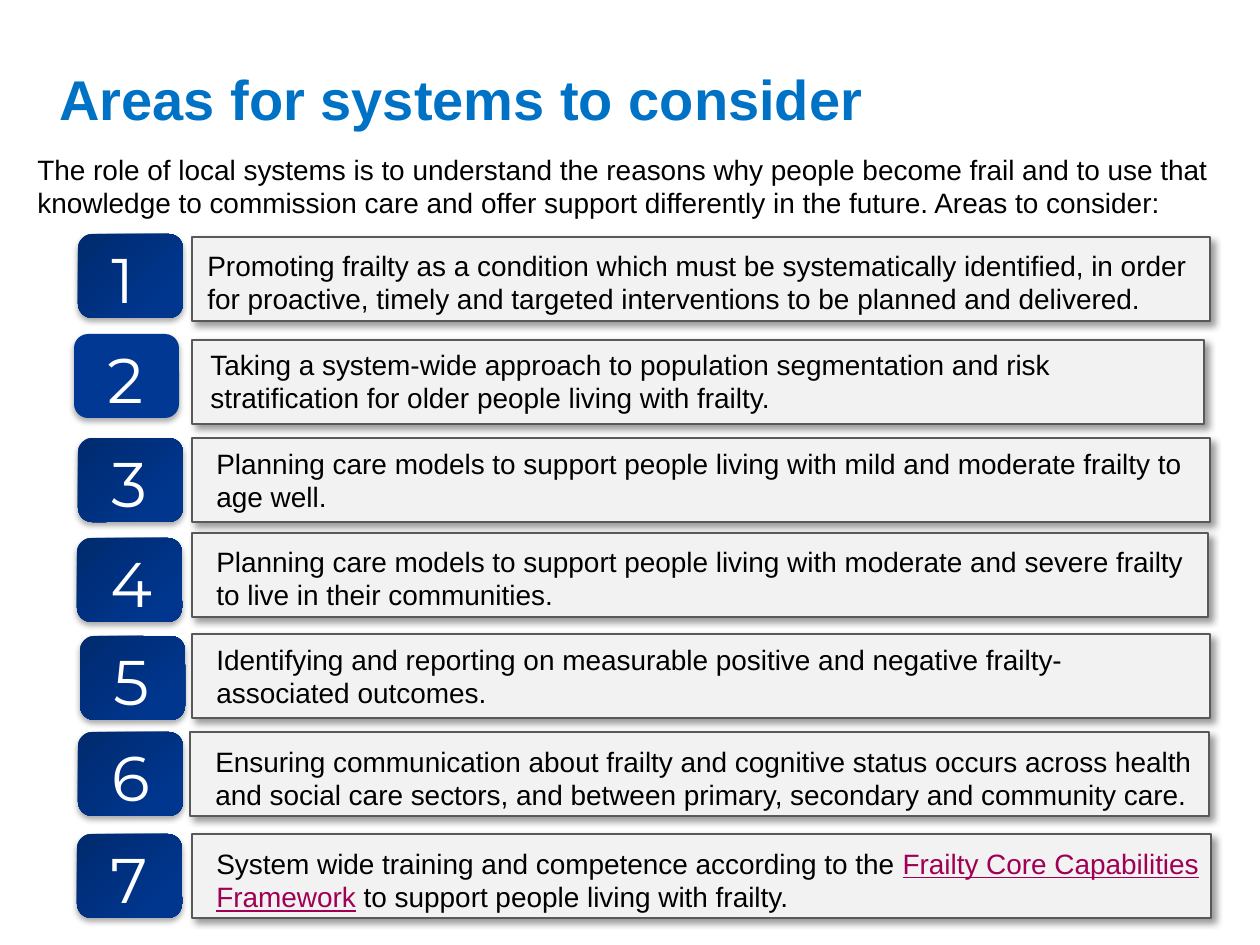
from dataclasses import dataclass

import pptx
import pptx.dml.color
import pptx.enum.shapes
import pptx.enum.text
import pptx.oxml
import pptx.oxml.ns
import pptx.util

PX = 914400 / 126
SHAPES = pptx.enum.shapes.MSO_SHAPE
COLOURS = {
    "title": "0072C6", "text": "000000", "digit": "FFFFFF", "link": "A00054",
    "badge": "003893", "panel": "F2F2F2", "border": "595959", "shadow": "000000",
}
BADGE_STOPS = [(0, "002A6E"), (80, "00368E"), (100, "00378F")]
BADGE_WIDTH, ROW_HEIGHT = 105, 84


@dataclass(frozen=True)
class Box:
    left: int
    top: int
    width: int
    height: int

    def emu(self) -> list[int]:
        return [pptx.util.Emu(round(side * PX))
                for side in (self.left, self.top, self.width, self.height)]


@dataclass(frozen=True)
class Shadow:
    """Opacity in percent, blur and distance in points, angle in degrees."""
    opacity: int
    blur: float
    distance: float
    angle: int


@dataclass(frozen=True)
class Style:
    size: int
    colour: str = "text"
    font: str = "Arial"
    bold: bool = False
    wrap: bool = True
    anchor: pptx.enum.text.MSO_ANCHOR = pptx.enum.text.MSO_ANCHOR.TOP
    grow: bool = True


@dataclass(frozen=True)
class Area:
    """One numbered row; a span in link is drawn as a link."""
    badge: tuple[int, int]
    panel: tuple[int, int, int]
    words: tuple[int, int, int]
    spans: tuple[str, ...]
    link: str = ""
    gradient: bool = True
    digit_width: int = 60


TITLE = Style(32, "title", bold=True, anchor=pptx.enum.text.MSO_ANCHOR.MIDDLE, grow=False)
BODY = Style(16)
DIGIT = Style(36, "digit", "Montserrat", wrap=False)
BADGE_SHADOW = Shadow(32, 3.5, 2.2, 90)
PANEL_SHADOW = Shadow(40, 4, 3, 45)
LINK = "Frailty Core Capabilities Framework"

AREAS = [
    Area((78, 234), (192, 237, 1018), (195, 242, 1012),
         ("Promoting frailty as a condition which must be systematically identified, in order "
          "for proactive, timely and targeted interventions to be planned and delivered.",)),
    Area((74, 334), (192, 340, 1012), (198, 341, 978),
         ("Taking a system-wide approach to population segmentation and risk "
          "stratification for older people living with frailty.",), gradient=False),
    Area((78, 438), (192, 438, 1018), (204, 440, 1003),
         ("Planning care models to support people living with mild and moderate frailty to "
          "age well.",)),
    Area((77, 538), (192, 533, 1016), (204, 538, 1005),
         ("Planning care models to support people living with moderate and severe frailty "
          "to live in their communities.",)),
    Area((80, 636), (192, 634, 1018), (204, 636, 994),
         ("Identifying and reporting on measurable positive and negative "
          "frailty-associated outcomes.",)),
    Area((78, 732), (190, 732, 1019), (203, 738, 1007),
         ("Ensuring communication about frailty and cognitive status occurs across health "
          "and social care sectors, and between primary, secondary and community care.",),
         digit_width=68),
    Area((77, 834), (192, 834, 1019), (204, 840, 1008),
         ("System wide training and competence according to the ", LINK,
          " to support people living with frailty."), link=LINK, digit_width=68),
]


def colour(name: str) -> pptx.dml.color.RGBColor:
    return pptx.dml.color.RGBColor.from_string(COLOURS[name])


def add_text(page, box: Box, spans: tuple[str, ...], style: Style, link: str = "") -> None:
    frame = page.shapes.add_textbox(*box.emu()).text_frame
    frame.word_wrap = style.wrap
    frame.vertical_anchor = style.anchor
    if style.grow:
        frame.auto_size = pptx.enum.text.MSO_AUTO_SIZE.SHAPE_TO_FIT_TEXT
    para = frame.paragraphs[0]
    para.font.name = style.font
    para.font.size = pptx.util.Pt(style.size)
    para.font.bold = style.bold
    para.font.color.rgb = colour(style.colour)
    for text in spans:
        span = para.add_run()
        span.text = text
        if text == link:
            span.font.underline = True
            span.font.color.rgb = colour("link")


def add_card(page, kind, box: Box, fill: str, shadow: Shadow):
    card = page.shapes.add_shape(kind, *box.emu())
    card.fill.solid()
    card.fill.fore_color.rgb = colour(fill)
    card.line.fill.background()
    card.shadow.inherit = False
    effects = card.element.spPr.find(pptx.oxml.ns.qn("a:effectLst"))
    effects.append(pptx.oxml.parse_xml(
        f'<a:outerShdw {pptx.oxml.ns.nsdecls("a")} blurRad="{pptx.util.Pt(shadow.blur)}" '
        f'dist="{pptx.util.Pt(shadow.distance)}" dir="{shadow.angle * 60000}" '
        f'rotWithShape="0"><a:srgbClr val="{COLOURS["shadow"]}">'
        f'<a:alpha val="{shadow.opacity * 1000}"/></a:srgbClr></a:outerShdw>'))
    return card


def set_gradient(card) -> None:
    """Replace the solid fill with the three-stop diagonal gradient."""
    stops = "".join(f'<a:gs pos="{place * 1000}"><a:srgbClr val="{value}"/></a:gs>'
                    for place, value in BADGE_STOPS)
    gradient = pptx.oxml.parse_xml(
        f'<a:gradFill {pptx.oxml.ns.nsdecls("a")} rotWithShape="1"><a:gsLst>{stops}</a:gsLst>'
        '<a:lin ang="2700000" scaled="0"/></a:gradFill>')
    properties = card.element.spPr
    properties.replace(properties.find(pptx.oxml.ns.qn("a:solidFill")), gradient)


def add_area(page, number: int, area: Area) -> None:
    left, top = area.badge
    badge = add_card(page, SHAPES.ROUNDED_RECTANGLE,
                     Box(left, top, BADGE_WIDTH, ROW_HEIGHT), "badge", BADGE_SHADOW)
    if area.gradient:
        set_gradient(badge)
    add_text(page, Box(left + 21, top, area.digit_width, 89), (str(number),), DIGIT)

    panel = add_card(page, SHAPES.RECTANGLE, Box(*area.panel, ROW_HEIGHT),
                     "panel", PANEL_SHADOW)
    panel.line.color.rgb = colour("border")
    panel.line.width = pptx.util.Pt(1)
    add_text(page, Box(*area.words, 81), area.spans, BODY, area.link)


def main() -> None:
    deck = pptx.Presentation()
    deck.slide_width = pptx.util.Inches(10)
    deck.slide_height = pptx.util.Inches(7.5)
    page = deck.slides.add_slide(deck.slide_layouts[6])
    add_text(page, Box(47, 52, 1024, 92), ("Areas for systems to consider",), TITLE)
    add_text(page, Box(25, 146, 1207, 81),
             ("The role of local systems is to understand the reasons why people become frail "
              "and to use that knowledge to commission care and offer support differently in "
              "the future. Areas to consider:",), BODY)
    for number, area in enumerate(AREAS, start=1):
        add_area(page, number, area)
    deck.save("out.pptx")


if __name__ == "__main__":
    main()
